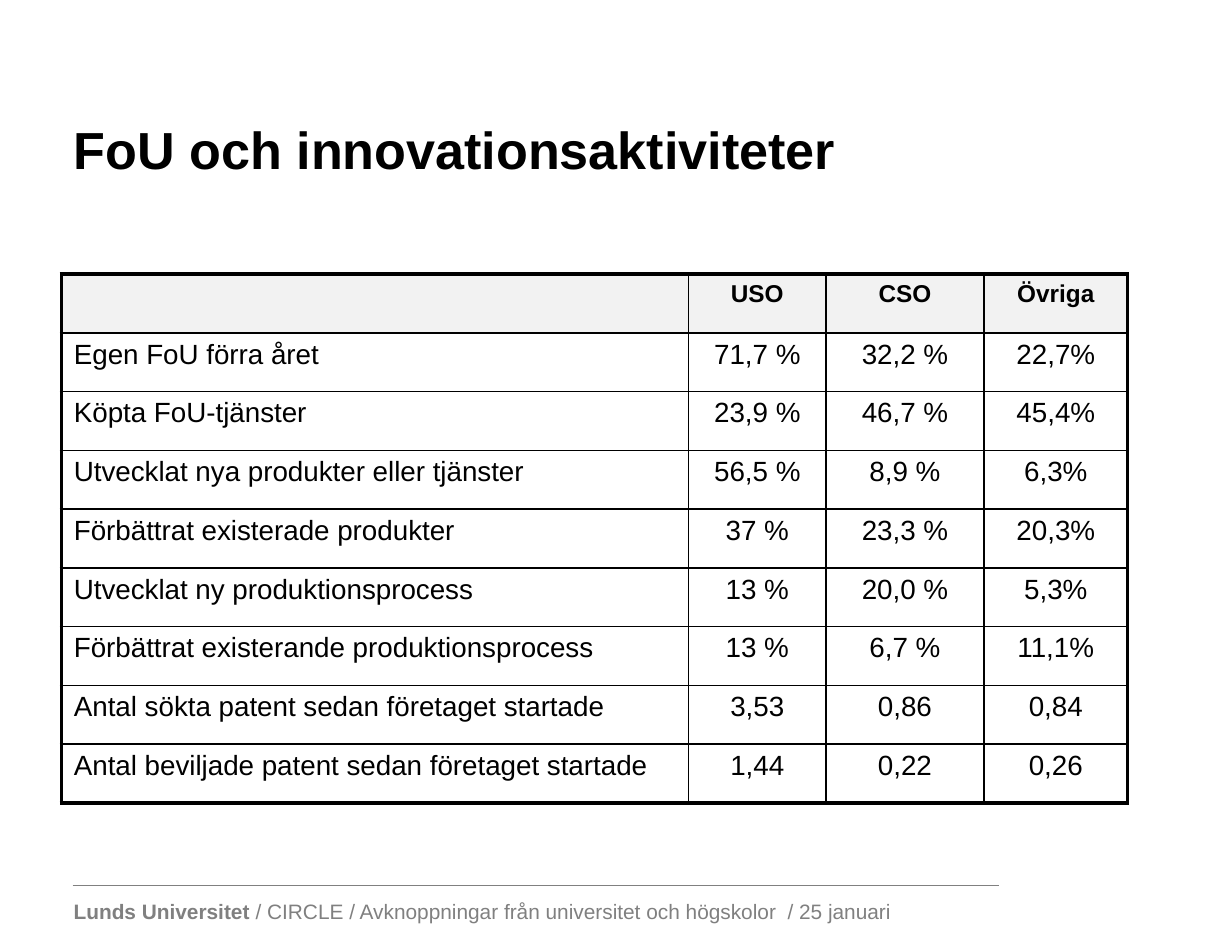
import pptx
import pptx.util
import pptx.dml.color
import pptx.enum.shapes
import pptx.enum.text
import pptx.oxml
import pptx.oxml.ns
import lxml.etree

Inches = pptx.util.Inches
Pt = pptx.util.Pt
Align = pptx.enum.text.PP_ALIGN
COLORS = {"text": "000000", "header": "F2F2F2", "footer": "808080"}
ROWS = [
    ("", "USO", "CSO", "Övriga"),
    ("Egen FoU förra året", "71,7 %", "32,2 %", "22,7%"),
    ("Köpta FoU-tjänster", "23,9 %", "46,7 %", "45,4%"),
    ("Utvecklat nya produkter eller tjänster", "56,5 %", "8,9 %", "6,3%"),
    ("Förbättrat existerade produkter", "37 %", "23,3 %", "20,3%"),
    ("Utvecklat ny produktionsprocess", "13 %", "20,0 %", "5,3%"),
    ("Förbättrat existerande produktionsprocess", "13 %", "6,7 %", "11,1%"),
    ("Antal sökta patent sedan företaget startade", "3,53", "0,86", "0,84"),
    ("Antal beviljade patent sedan företaget startade", "1,44", "0,22", "0,26"),
]
COLUMN_WIDTHS = [5.01, 1.1, 1.26, 1.15]
ROW_HEIGHT = 0.47
CM_PER_INCH = 2.54


def set_font(paragraph, size, color, bold):
    paragraph.font.name = "Arial"
    paragraph.font.size = Pt(size)
    paragraph.font.bold = bold
    paragraph.font.color.rgb = pptx.dml.color.RGBColor.from_string(COLORS[color])


def add_border(cell, side, width):
    properties = cell._tc.get_or_add_tcPr()
    line = lxml.etree.SubElement(properties, pptx.oxml.ns.qn(f"a:ln{side}"), w=str(Pt(width)))
    fill = lxml.etree.SubElement(line, pptx.oxml.ns.qn("a:solidFill"))
    lxml.etree.SubElement(fill, pptx.oxml.ns.qn("a:srgbClr"), val=COLORS["text"])


presentation = pptx.Presentation()
presentation.slide_width = Inches(25 / CM_PER_INCH)
presentation.slide_height = Inches(19 / CM_PER_INCH)
slide = presentation.slides.add_slide(presentation.slide_layouts[5])

title = slide.shapes.title
title.left, title.top = Inches(0.49), Inches(0.56)
title.width, title.height = Inches(8.86), Inches(1.25)
title.text_frame.text = "FoU och innovationsaktiviteter"
title.text_frame.vertical_anchor = pptx.enum.text.MSO_ANCHOR.MIDDLE
title.text_frame.paragraphs[0].alignment = Align.LEFT
set_font(title.text_frame.paragraphs[0], 30, "text", True)

table = slide.shapes.add_table(
    len(ROWS), len(COLUMN_WIDTHS), Inches(0.49), Inches(2.19),
    Inches(sum(COLUMN_WIDTHS)), Inches(ROW_HEIGHT * len(ROWS)),
).table
table.horz_banding = False
for column, width in zip(table.columns, COLUMN_WIDTHS):
    column.width = Inches(width)

last_row = len(ROWS) - 1
last_column = len(COLUMN_WIDTHS) - 1
for row_index, values in enumerate(ROWS):
    table.rows[row_index].height = Inches(ROW_HEIGHT)
    for column_index, value in enumerate(values):
        cell = table.cell(row_index, column_index)
        outer_sides = {
            "L": column_index == 0,
            "R": column_index == last_column,
            "T": row_index == 0,
            "B": row_index == last_row,
        }
        for side, is_outer in outer_sides.items():
            add_border(cell, side, 2.25 if is_outer else 1)
        is_header = row_index == 0
        if is_header:
            cell.fill.solid()
            cell.fill.fore_color.rgb = pptx.dml.color.RGBColor.from_string(COLORS["header"])
        else:
            cell.fill.background()
        cell.text = value
        paragraph = cell.text_frame.paragraphs[0]
        paragraph.alignment = Align.CENTER if column_index else Align.LEFT
        set_font(paragraph, 14 if is_header else 16, "text", is_header)

footer_line = slide.shapes.add_connector(
    pptx.enum.shapes.MSO_CONNECTOR.STRAIGHT,
    Inches(0.58), Inches(7.08), Inches(7.98), Inches(7.08),
)
footer_line.line.width = Pt(0.5)
footer_line.line.color.rgb = pptx.dml.color.RGBColor.from_string(COLORS["footer"])
lxml.etree.SubElement(footer_line._element.spPr, pptx.oxml.ns.qn("a:effectLst"))

footer = slide.shapes.add_textbox(Inches(0.49), Inches(7.13), Inches(6.74), Inches(0.3))
footer.text_frame.word_wrap = False
paragraph = footer.text_frame.paragraphs[0]
set_font(paragraph, 12, "footer", False)
university = paragraph.add_run()
university.text = "Lunds Universitet"
university.font.bold = True
paragraph.add_run().text = " / CIRCLE / Avknoppningar från universitet och högskolor  / 25 januari"

presentation.save("out.pptx")
